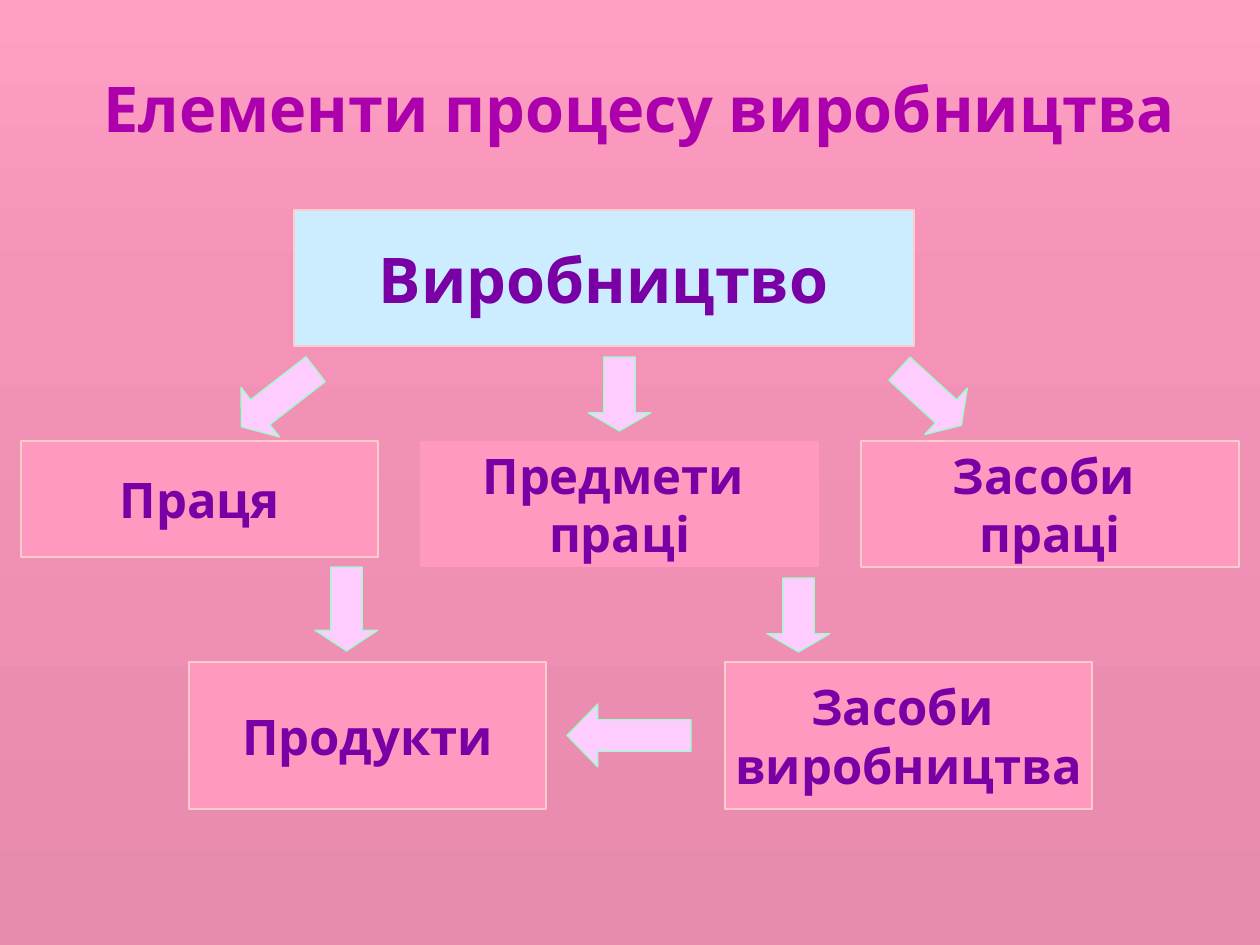
from copy import deepcopy

from pptx import Presentation
from pptx.dml.color import RGBColor
from pptx.enum.shapes import MSO_SHAPE
from pptx.enum.text import MSO_ANCHOR, PP_ALIGN
from pptx.util import Inches, Pt

EMU_PER_PX = Inches(1) / 126
FONT = "Karla"

TITLE = RGBColor(0xAC, 0x00, 0xAC)
TEXT = RGBColor(0x79, 0x00, 0xA4)
BLUE = RGBColor(0xCC, 0xEC, 0xFF)
PINK = RGBColor(0xFF, 0x99, 0xC0)
BOX_LINE = RGBColor(0xFF, 0xCC, 0xCC)
ARROW = RGBColor(0xFF, 0xCC, 0xFF)
ARROW_LINE = RGBColor(0x99, 0xFF, 0xCC)
BACKGROUND = [
    (0, RGBColor(0xFF, 0x9F, 0xC3)),
    (0.31, RGBColor(0xF4, 0x92, 0xB7)),
    (1, RGBColor(0xE7, 0x8B, 0xAE)),
]


def px(*values):
    return [round(v * EMU_PER_PX) for v in values]


class Diagram:
    def __init__(self, slide):
        self.slide = slide

    def background(self, stops):
        fill = self.slide.background.fill
        fill.gradient()
        fill.gradient_angle = 270
        # The default gradient has two stops; add the middle one
        first = fill.gradient_stops[0]._gs
        first.addnext(deepcopy(first))
        for stop, (position, color) in zip(fill.gradient_stops, stops):
            stop.position = position
            stop.color.rgb = color

    def set_text(self, sp, lines, size, color, anchor):
        tf = sp.text_frame
        tf.text = "\n".join(lines)
        tf.word_wrap = False
        tf.vertical_anchor = anchor
        for p in tf.paragraphs:
            p.alignment = PP_ALIGN.CENTER
            for r in p.runs:
                r.font.name = FONT
                r.font.size = Pt(size)
                r.font.bold = True
                r.font.color.rgb = color

    def title(self, text, at):
        sp = self.slide.shapes.title
        sp.left, sp.top, sp.width, sp.height = px(*at)
        self.set_text(sp, [text], 36, TITLE, MSO_ANCHOR.TOP)

    def shape(self, kind, at, fill, line):
        sp = self.slide.shapes.add_shape(kind, *px(*at))
        sp.shadow.inherit = False
        sp.fill.solid()
        sp.fill.fore_color.rgb = fill
        if line is None:
            sp.line.fill.background()
        else:
            sp.line.color.rgb = line
            sp.line.width = Pt(0.75)
        return sp

    def box(self, lines, at, fill=PINK, line=BOX_LINE, size=28):
        sp = self.shape(MSO_SHAPE.RECTANGLE, at, fill, line)
        self.set_text(sp, lines, size, TEXT, MSO_ANCHOR.MIDDLE)

    def arrow(self, at, head, rotation=0, kind=MSO_SHAPE.DOWN_ARROW):
        sp = self.shape(kind, at, ARROW, ARROW_LINE)
        sp.adjustments[0] = 0.5
        sp.adjustments[1] = head
        sp.rotation = rotation


def main():
    prs = Presentation()
    prs.slide_width, prs.slide_height = px(1260, 945)
    s = Diagram(prs.slides.add_slide(prs.slide_layouts[5]))
    s.background(BACKGROUND)
    s.title("Елементи процесу виробництва", (73, 63, 1133, 105))

    # Production and its three elements
    s.box(["Виробництво"], (294, 210, 620, 136), fill=BLUE, size=36)
    s.box(["Праця"], (21, 441, 357, 116))
    s.box(["Засоби ", "праці"], (861, 441, 378, 126))
    s.box(["Предмети ", "праці"], (420, 441, 399, 126), line=None)

    # Means of production and products
    s.box(["Засоби ", "виробництва"], (725, 662, 367, 147))
    s.box(["Продукти"], (189, 662, 357, 147))

    # Arrows from production to its elements
    s.arrow((247, 351, 63, 94), 0.38, rotation=52.2)
    s.arrow((588, 357, 63, 74), 0.29)
    s.arrow((899, 355, 63, 84), 0.33, rotation=312.5)

    # Arrows to the lower row and across it
    s.arrow((315, 567, 63, 84), 0.33)
    s.arrow((767, 578, 63, 74), 0.29)
    s.arrow((567, 704, 124, 63), 0.49, kind=MSO_SHAPE.LEFT_ARROW)

    prs.save("out.pptx")


if __name__ == "__main__":
    main()
